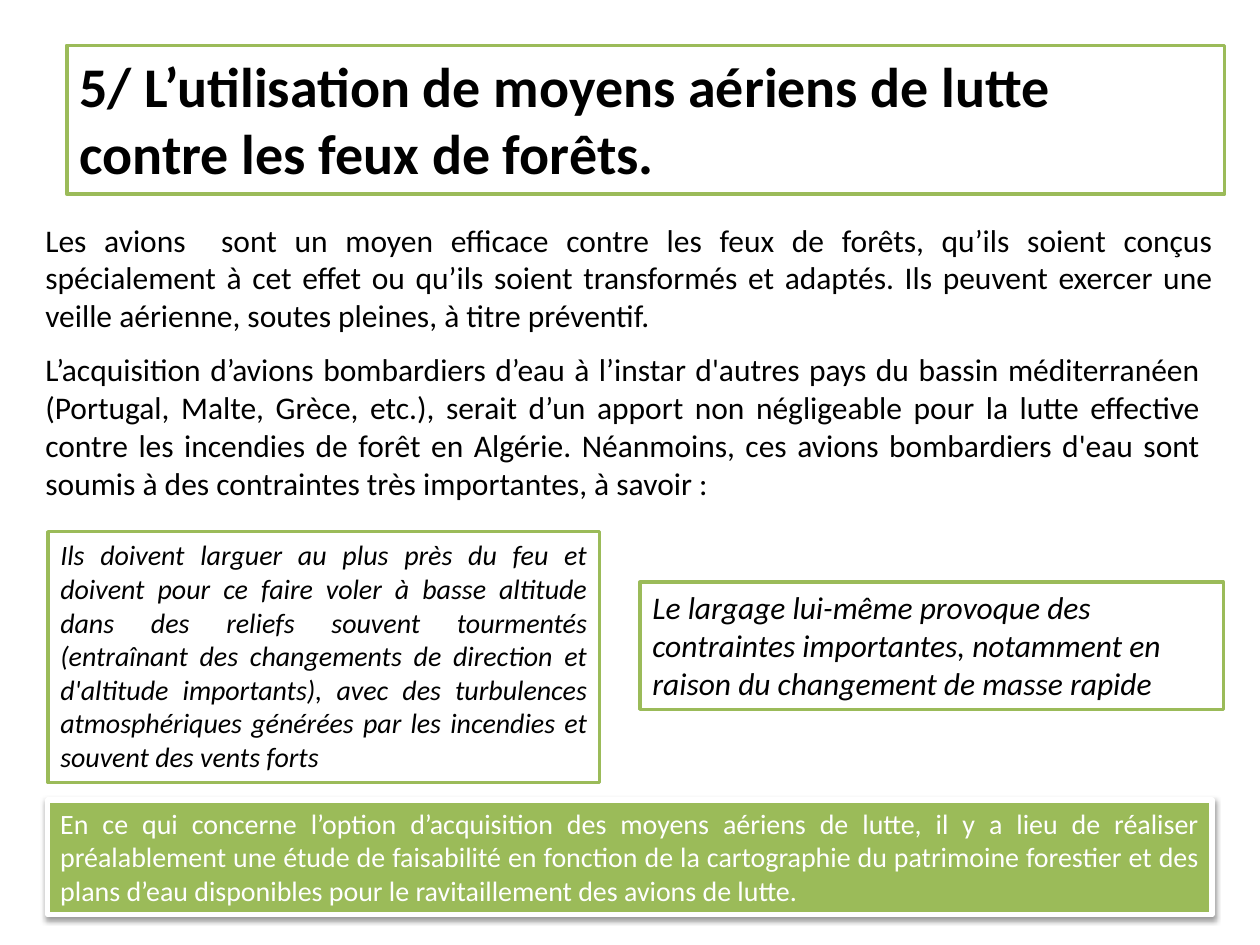
from lxml.etree import SubElement
from pptx import Presentation
from pptx.dml.color import RGBColor
from pptx.enum.shapes import MSO_SHAPE
from pptx.enum.text import MSO_ANCHOR, MSO_AUTO_SIZE, PP_ALIGN
from pptx.oxml.ns import qn
from pptx.util import Inches, Pt

GREEN, WHITE, BLACK = "9BBB59", "FFFFFF", "000000"
FRAMED = {"fill": WHITE, "line": GREEN, "width": 2, "color": BLACK}
PLAIN = {"color": BLACK}
SOLID = {"fill": GREEN, "line": WHITE, "width": 3, "color": WHITE, "shadow": True}
LEFT, JUSTIFY = PP_ALIGN.LEFT, PP_ALIGN.JUSTIFY

TITLE = (
    "5/ L’utilisation de moyens aériens de lutte contre les feux de forêts.",
    (0.53, 0.36, 9.19, 1.18), FRAMED, LEFT, {"size": Pt(32), "bold": True},
)
BODY = [
    (
        "Les avions  sont un moyen efficace contre les feux de forêts, qu’ils soient conçus "
        "spécialement à cet effet ou qu’ils soient transformés et adaptés. Ils peuvent exercer "
        "une veille aérienne, soutes pleines, à titre préventif. ",
        (0.26, 1.7, 9.47, 1.01), PLAIN, JUSTIFY, {"size": Pt(18)},
    ),
    (
        "L’acquisition d’avions bombardiers d’eau à l’instar d'autres pays du bassin "
        "méditerranéen (Portugal, Malte, Grèce, etc.), serait d’un apport non négligeable pour "
        "la lutte effective contre les incendies de forêt en Algérie. Néanmoins, ces avions "
        "bombardiers d'eau sont soumis à des contraintes très importantes, à savoir :",
        (0.26, 2.73, 9.37, 1.62), PLAIN, JUSTIFY, {"size": Pt(18)},
    ),
]
BOXES = [
    (
        "Ils doivent larguer au plus près du feu et doivent pour ce faire voler à basse altitude "
        "dans des reliefs souvent tourmentés (entraînant des changements de direction et "
        "d'altitude importants), avec des turbulences atmosphériques générées par les incendies "
        "et souvent des vents forts",
        (0.38, 4.22, 4.38, 1.99), FRAMED, JUSTIFY, {"size": Pt(16), "italic": True},
    ),
    (
        "Le largage lui-même provoque des contraintes importantes, notamment en raison du "
        "changement de masse rapide",
        (5.08, 4.62, 4.63, 1.01), FRAMED, LEFT, {"size": Pt(18), "italic": True},
    ),
    (
        "En ce qui concerne l’option d’acquisition des moyens aériens de lutte, il y a lieu de "
        "réaliser préalablement une étude de faisabilité en fonction de la cartographie du "
        "patrimoine forestier et des plans d’eau disponibles pour le ravitaillement des avions "
        "de lutte.",
        (0.38, 6.35, 9.24, 0.91), SOLID, JUSTIFY, {"size": Pt(16)},
    ),
]


def rgb(value):
    return RGBColor.from_string(value)


def assign(target, values):
    for key, value in values.items():
        setattr(target, key, value)


def cast_shadow(shape):
    effects = shape._element.spPr.find(qn("a:effectLst"))
    shadow = SubElement(effects, qn("a:outerShdw"), blurRad=str(Pt(3.1)),
                        dist=str(Pt(1.6)), dir="5400000", rotWithShape="0")
    tint = SubElement(shadow, qn("a:srgbClr"), val=BLACK)
    SubElement(tint, qn("a:alpha"), val="38000")


def compose(shape, content):
    text, place, look, alignment, font = content
    assign(shape, dict(zip(("left", "top", "width", "height"), map(Inches, place))))
    if "fill" in look:
        shape.fill.solid()
        shape.fill.fore_color.rgb = rgb(look["fill"])
        shape.line.color.rgb = rgb(look["line"])
        shape.line.width = Pt(look["width"])
        shape.shadow.inherit = False
    if "shadow" in look:
        cast_shadow(shape)
    frame = shape.text_frame
    assign(frame, {"text": text, "word_wrap": True, "vertical_anchor": MSO_ANCHOR.TOP,
                   "auto_size": MSO_AUTO_SIZE.SHAPE_TO_FIT_TEXT})
    paragraph = frame.paragraphs[0]
    assign(paragraph, {"alignment": alignment, "space_before": Pt(0)})
    properties = paragraph._p.get_or_add_pPr()
    assign(properties, {"marL": 0, "indent": 0})
    properties.set("marL", "0")
    properties.set("indent", "0")
    SubElement(properties, qn("a:buNone"))
    assign(paragraph.runs[0].font, {"name": "Calibri", **font})
    paragraph.runs[0].font.color.rgb = rgb(look["color"])


def main():
    deck = Presentation()
    assign(deck, {"slide_width": Inches(10), "slide_height": Inches(7.5)})
    slide = deck.slides.add_slide(deck.slide_layouts.get_by_name("Two Content"))
    title, *paragraphs = slide.placeholders
    compose(title, TITLE)
    for placeholder, content in zip(paragraphs, BODY):
        compose(placeholder, content)
    for content in BOXES:
        box = slide.shapes.add_shape(MSO_SHAPE.RECTANGLE, *map(Inches, content[1]))
        compose(box, content)
    deck.save("out.pptx")


if __name__ == "__main__":
    main()
